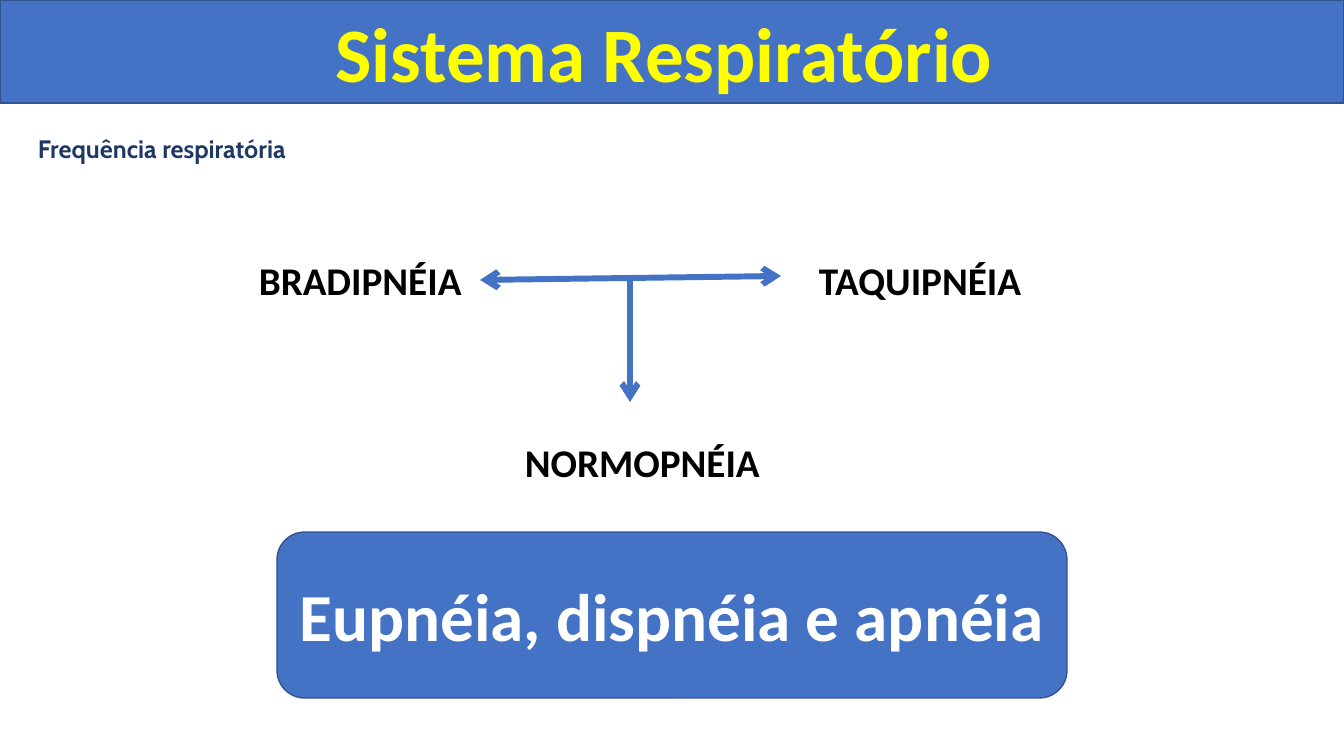
from dataclasses import dataclass

from lxml.etree import SubElement
from pptx import Presentation
from pptx.dml.color import RGBColor
from pptx.enum.shapes import MSO_CONNECTOR, MSO_SHAPE
from pptx.enum.text import MSO_ANCHOR, MSO_AUTO_SIZE, PP_ALIGN
from pptx.oxml.ns import qn
from pptx.shapes.autoshape import Shape
from pptx.slide import Slide
from pptx.util import Emu, Pt

EMU_PER_PX = 914400 / 100.8
BLUE = RGBColor(0x44, 0x72, 0xC4)
BORDER_BLUE = RGBColor(0x32, 0x54, 0x91)
NAVY = RGBColor(0x20, 0x38, 0x64)
YELLOW = RGBColor(0xFF, 0xFF, 0x00)
BLACK = RGBColor(0x00, 0x00, 0x00)
WHITE = RGBColor(0xFF, 0xFF, 0xFF)


def px(length: int) -> Emu:
    return Emu(round(length * EMU_PER_PX))


@dataclass(frozen=True)
class Box:
    left: int
    top: int
    width: int
    height: int

    def emu(self) -> tuple[Emu, Emu, Emu, Emu]:
        return px(self.left), px(self.top), px(self.width), px(self.height)


@dataclass(frozen=True)
class Wording:
    text: str
    size: int
    color: RGBColor
    font: str = "Calibri"
    align: PP_ALIGN = PP_ALIGN.LEFT
    anchor: MSO_ANCHOR = MSO_ANCHOR.TOP


@dataclass(frozen=True)
class Label:
    box: Box
    wording: Wording


@dataclass(frozen=True)
class Arrow:
    start: tuple[int, int]
    end: tuple[int, int]
    tips: tuple[str, ...]


TITLE = Label(Box(168, 0, 992, 104),
              Wording("Sistema Respiratório", 55, YELLOW, align=PP_ALIGN.CENTER))
BANNER = Box(0, 0, 1344, 103)
LABELS = [
    Label(Box(28, 128, 673, 40),
          Wording("Frequência respiratória", 18, NAVY, "Cabin", PP_ALIGN.JUSTIFY)),
    Label(Box(249, 251, 230, 57), Wording("BRADIPNÉIA", 28, BLACK)),
    Label(Box(809, 251, 230, 57), Wording("TAQUIPNÉIA", 28, BLACK)),
    Label(Box(515, 433, 293, 57), Wording("NORMOPNÉIA", 28, BLACK)),
]
ARROWS = [
    Arrow((480, 280), (781, 276), ("headEnd", "tailEnd")),
    Arrow((630, 276), (630, 402), ("tailEnd",)),
]
BREATHING_STATES = Label(
    Box(277, 532, 790, 166),
    Wording("Eupnéia, dispnéia e apnéia", 48, WHITE,
            align=PP_ALIGN.CENTER, anchor=MSO_ANCHOR.MIDDLE))


def write(shape: Shape, wording: Wording) -> None:
    frame = shape.text_frame
    frame.word_wrap = True
    frame.auto_size = MSO_AUTO_SIZE.NONE
    frame.vertical_anchor = wording.anchor
    paragraph = frame.paragraphs[0]
    paragraph.alignment = wording.align
    run = paragraph.add_run()
    run.text = wording.text
    run.font.name = wording.font
    run.font.size = Pt(wording.size)
    run.font.bold = True
    run.font.color.rgb = wording.color


def add_panel(slide: Slide, kind: MSO_SHAPE, box: Box) -> Shape:
    panel = slide.shapes.add_shape(kind, *box.emu())
    panel.shadow.inherit = False
    panel.fill.solid()
    panel.fill.fore_color.rgb = BLUE
    panel.line.color.rgb = BORDER_BLUE
    panel.line.width = Pt(1)
    return panel


def place_title(slide: Slide, label: Label) -> None:
    title = slide.shapes.title
    title.left, title.top, title.width, title.height = label.box.emu()
    write(title, label.wording)


def add_label(slide: Slide, label: Label) -> None:
    write(slide.shapes.add_textbox(*label.box.emu()), label.wording)


def add_arrow(slide: Slide, arrow: Arrow) -> None:
    connector = slide.shapes.add_connector(
        MSO_CONNECTOR.STRAIGHT, *map(px, arrow.start + arrow.end))
    connector.line.color.rgb = BLUE
    connector.line.width = Pt(4.25)
    properties = connector._element.spPr
    outline = properties.find(qn("a:ln"))
    for tip in arrow.tips:
        SubElement(outline, qn(f"a:{tip}"), type="arrow")
    SubElement(properties, qn("a:effectLst"))


def main() -> None:
    presentation = Presentation()
    presentation.slide_width = px(1344)
    presentation.slide_height = px(756)
    slide = presentation.slides.add_slide(presentation.slide_layouts[5])

    place_title(slide, TITLE)
    banner = add_panel(slide, MSO_SHAPE.RECTANGLE, BANNER)
    slide.shapes.title._element.addprevious(banner._element)
    for label in LABELS:
        add_label(slide, label)
    for arrow in ARROWS:
        add_arrow(slide, arrow)
    states = add_panel(slide, MSO_SHAPE.ROUNDED_RECTANGLE, BREATHING_STATES.box)
    write(states, BREATHING_STATES.wording)

    presentation.save("out.pptx")


if __name__ == "__main__":
    main()
